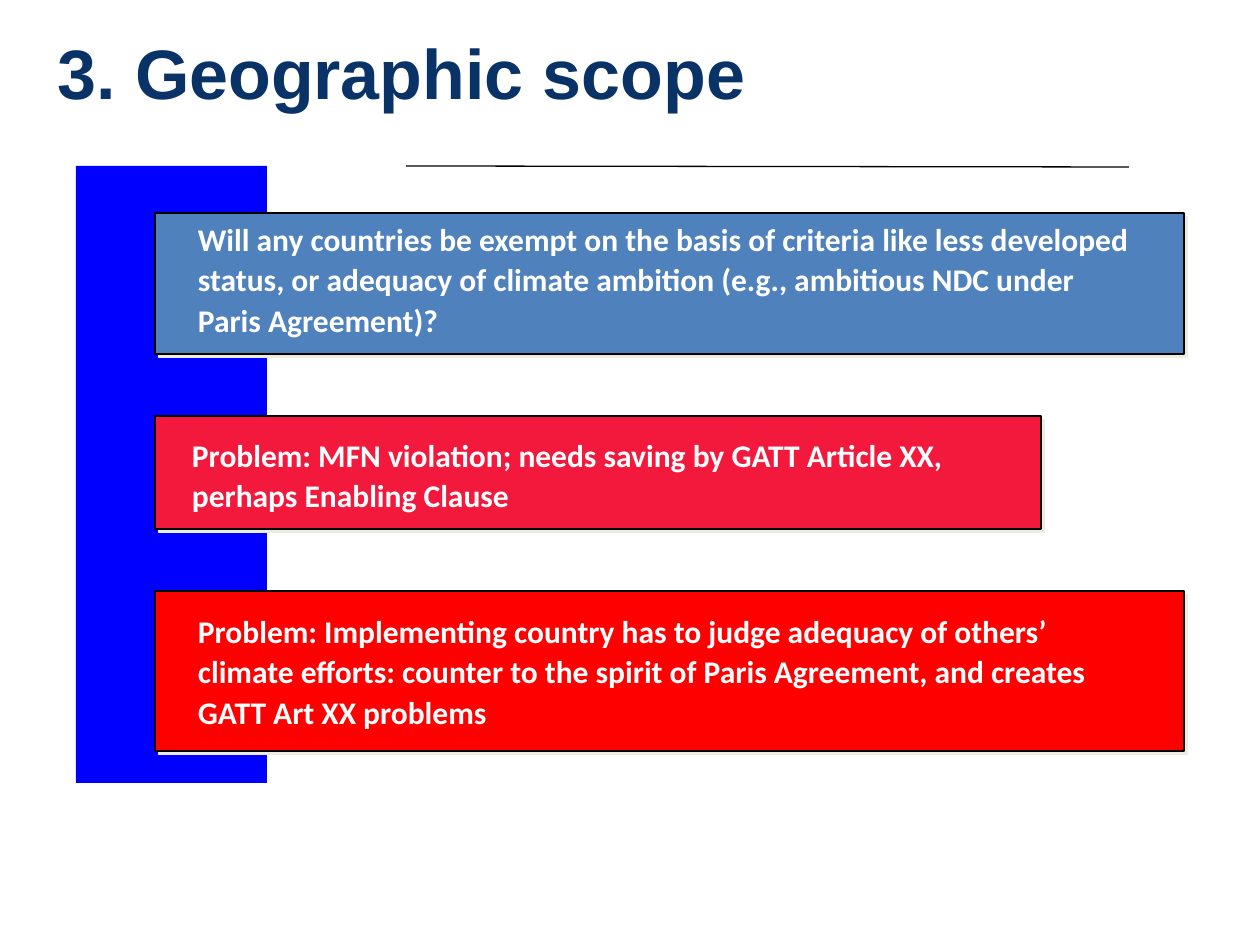
from lxml.etree import SubElement as Sub
from pptx import Presentation
from pptx.dml.color import RGBColor as Rgb
from pptx.enum.shapes import MSO_CONNECTOR as Conn, MSO_SHAPE as Kind
from pptx.enum.text import MSO_ANCHOR as Anchor
from pptx.oxml.ns import qn
from pptx.util import Pt

UNIT = 914400 / 126
HUES = {
    "title": "093266",
    "band": "0000FF",
    "query": "4F81BD",
    "rose": "F3193D",
    "red": "FF0000",
    "shade": "EEECE1",
    "line": "000000",
    "text": "FFFFFF",
}
CARDS = [
    ("query", (155, 213, 1029, 141), (198, 213, 944, 130),
     "Will any countries be exempt on the basis of criteria like less developed "
     "status, or adequacy of climate ambition (e.g., ambitious NDC under Paris Agreement)?"),
    ("rose", (155, 416, 886, 113), (192, 421, 813, 105),
     "Problem: MFN violation; needs saving by GATT Article XX, perhaps Enabling Clause"),
    ("red", (155, 591, 1029, 160), (198, 597, 944, 146),
     "Problem: Implementing country has to judge adequacy of others’ climate efforts: "
     "counter to the spirit of Paris Agreement, and creates GATT Art XX problems"),
]


def px(*vals):
    return [round(val * UNIT) for val in vals]


def hue(name):
    return Rgb.from_string(HUES[name])


def add_text(shapes, area, words, face, size, tint):
    box = shapes.add_textbox(*px(*area))
    frame = box.text_frame
    frame.word_wrap = True
    frame.vertical_anchor = Anchor.MIDDLE
    frame.text = words
    font = frame.paragraphs[0].runs[0].font
    font.name, font.size, font.bold = face, Pt(size), True
    font.color.rgb = hue(tint)
    return frame


def add_rect(shapes, area, tint):
    rect = shapes.add_shape(Kind.RECTANGLE, *px(*area))
    rect.shadow.inherit = False
    rect.fill.solid()
    rect.fill.fore_color.rgb = hue(tint)
    rect.line.fill.background()
    return rect


def add_shade(rect):
    effects = rect._element.spPr.find(qn("a:effectLst"))
    shade = Sub(effects, qn("a:outerShdw"), blurRad="0", dist=str(Pt(2.8)),
                dir="2700000", algn="ctr", rotWithShape="0")
    Sub(shade, qn("a:srgbClr"), val=HUES["shade"])


def set_line(line):
    line.color.rgb = hue("line")
    line.width = Pt(0.75)


def add_rule(shapes, ends):
    rule = shapes.add_connector(Conn.STRAIGHT, *px(*ends))
    set_line(rule.line)
    Sub(rule._element.spPr, qn("a:effectLst"))


def add_card(shapes, tint, area, inner, words):
    group = shapes.add_group_shape().shapes
    rect = add_rect(group, area, tint)
    set_line(rect.line)
    add_shade(rect)
    frame = add_text(group, inner, words, "Calibri", 18, "text")
    frame.margin_left = frame.margin_right = 0
    frame.margin_top = frame.margin_bottom = 0
    para = frame.paragraphs[0]
    para.line_spacing = 1.07
    para.space_after = Pt(8)


def main():
    deck = Presentation()
    deck.slide_width, deck.slide_height = px(1260, 945)
    shapes = deck.slides.add_slide(deck.slide_layouts[6]).shapes
    add_text(shapes, (45, 52, 1188, 40), "3. Geographic scope", "Arial", 40, "title")
    add_rect(shapes, (76, 166, 191, 617), "band")
    add_rule(shapes, (406, 166, 1129, 167))
    for card in CARDS:
        add_card(shapes, *card)
    deck.save("out.pptx")


if __name__ == "__main__":
    main()
